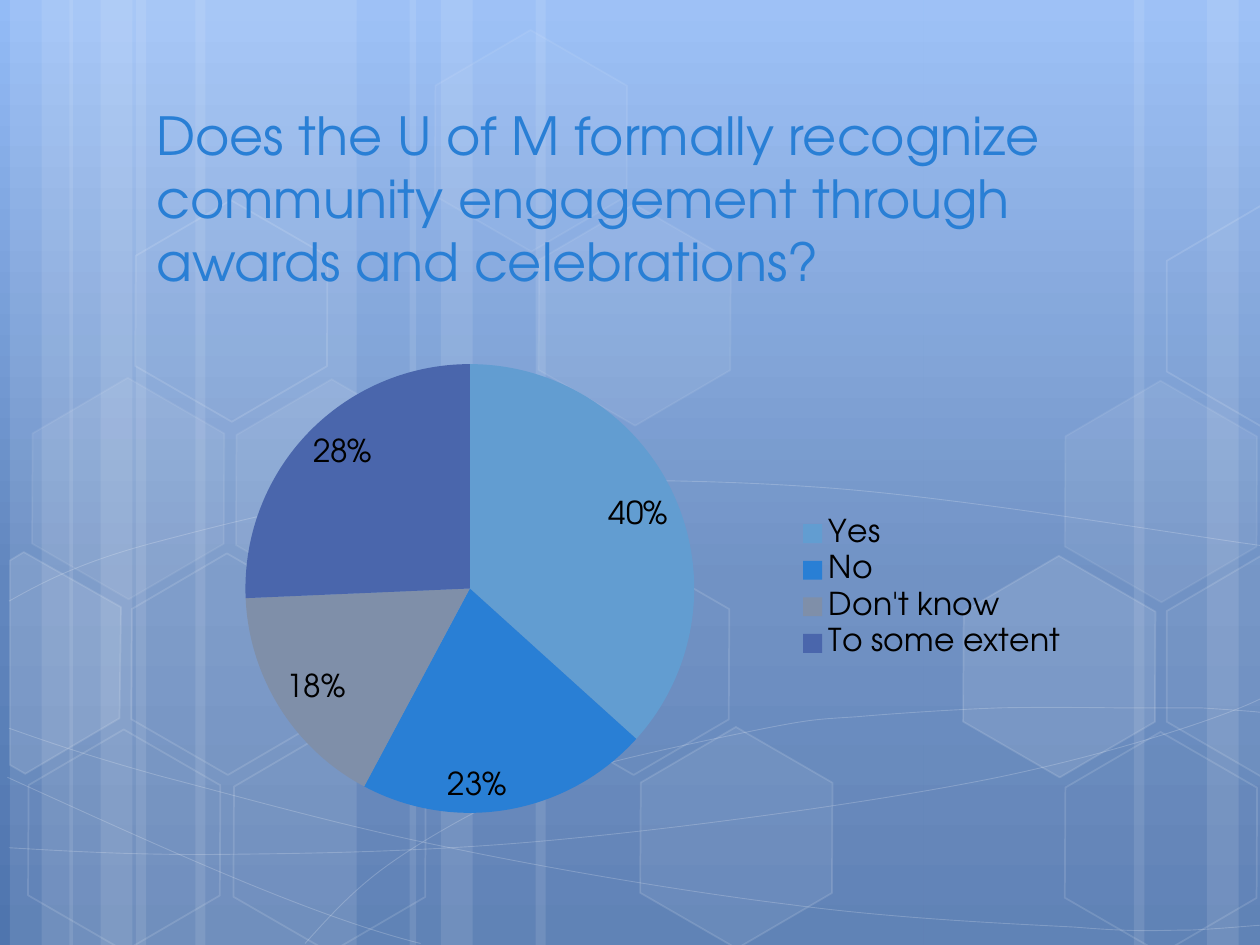
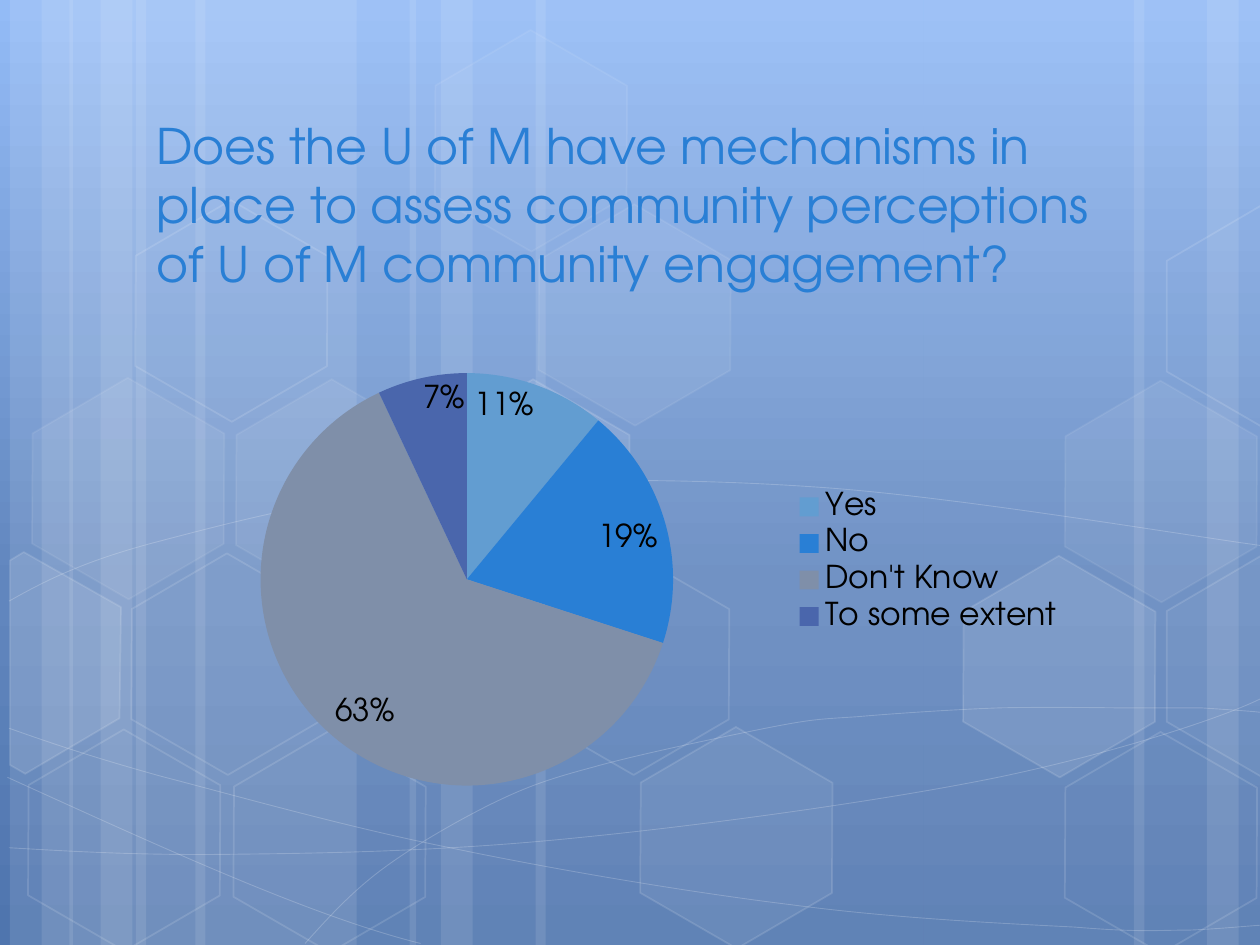
import copy

import pptx
import pptx.chart.data
import pptx.dml.color
import pptx.enum.chart
import pptx.enum.shapes
import pptx.enum.text
import pptx.oxml
import pptx.oxml.ns
import pptx.util

Cm = pptx.util.Cm
Pt = pptx.util.Pt
RGBColor = pptx.dml.color.RGBColor
SHAPE = pptx.enum.shapes.MSO_SHAPE

FONT = "TeX Gyre Adventor"
WHITE = RGBColor(0xFF, 0xFF, 0xFF)
BLACK = RGBColor(0x00, 0x00, 0x00)
TITLE_BLUE = RGBColor(0x29, 0x7F, 0xD5)
SKY = [(0, RGBColor(0x93, 0xBB, 0xF6)), (0.62, RGBColor(0x61, 0x86, 0xBE)),
       (1, RGBColor(0x4F, 0x75, 0xAE))]
SLICE_COLORS = [RGBColor(0x62, 0x9D, 0xD1), TITLE_BLUE,
                RGBColor(0x7F, 0x8F, 0xA9), RGBColor(0x4A, 0x66, 0xAC)]

BANDS = [(2.74, 4.45), (0.2, 1.27), (0.84, 2.11), (3.94, 4.45), (1.4, 1.27), (2.03, 2.11),
         (18.62, 4.45), (24.33, 1.27), (22.86, 2.11), (10.8, 7.82), (8.26, 1.27), (8.89, 2.11)]

CURVES = [
    [(0.18, 17.09), (1.55, 17.17), (2.92, 17.25), (4.83, 17.22), (6.73, 17.2), (9.09, 17.15),
     (11.63, 16.89), (14.17, 16.64), (17.78, 16.15), (20.12, 15.67), (22.43, 15.19),
     (24.82, 14.43), (25.58, 14)],
    [(0.18, 12.12), (0.91, 11.71), (1.65, 11.33), (3.07, 10.95), (4.52, 10.57), (6.58, 10.01),
     (8.81, 9.83), (11.07, 9.65), (13.82, 9.63), (16.61, 9.83), (19.41, 10.03),
     (24.05, 10.82), (25.58, 11.02)],
    [(0.15, 15.67), (3.23, 17.07), (6.27, 18.47), (8.48, 19.02)],
    [(0.18, 14.68), (0.97, 14.96), (1.78, 15.24), (3.25, 15.65), (4.72, 16.03), (6.93, 16.66),
     (9.07, 17.09), (11.18, 17.53), (13.84, 17.98), (15.95, 18.24), (18.06, 18.52),
     (20.32, 18.62), (21.67, 18.69), (22.99, 18.8), (23.34, 18.75), (24, 18.75),
     (24.66, 18.72), (25.1, 18.67), (25.58, 18.64)],
    [(6.15, 19.02), (6.6, 18.52), (7.06, 18.01), (7.67, 17.55), (8.28, 17.09), (9.14, 16.59),
     (9.86, 16.23), (10.57, 15.88), (11, 15.72), (11.94, 15.47), (12.85, 15.21),
     (14.55, 14.86), (15.44, 14.68), (16.36, 14.5), (16.48, 14.5), (17.27, 14.45),
     (18.06, 14.38), (19.3, 14.3), (20.17, 14.27), (21.06, 14.25), (22.5, 14.27),
     (22.5, 14.27), (22.5, 14.27), (24.21, 14.27), (24.21, 14.27), (24.66, 14.3),
     (25.1, 14.33), (25.32, 14.35), (25.55, 14.38), (25.48, 14.35), (25.55, 14.38)],
]

HEXAGONS = [
    (8.53, 7.95, 10, 12), (10.54, 11.46, 0, 12), (10.57, 4.42, 7, 8), (8.48, 0.91, 4, 8),
    (12.62, 14.96, 6, 12), (0.28, 15.01, 0, 12), (0.36, 7.92, 7, 8), (2.36, 11.46, 0, 12),
    (4.42, 15.04, 0, 12), (4.47, 7.95, 7, 8), (2.44, 4.34, 0, 12), (19.13, 11.51, 10, 12),
    (21.18, 15.06, 0, 12), (21.18, 7.98, 7, 8),
]

LEFT_CUT = [(0.2, 11.3), (0.48, 11.13), (2.44, 12.24), (2.41, 14.48), (0.51, 15.6), (0.2, 15.42)]
RIGHT_CUT = [(23.52, 12.32), (25.43, 11.2), (25.63, 11.33), (25.63, 15.57), (25.45, 15.67),
             (23.52, 14.55)]
RIGHT_CUT_HIGH = [(x, y - 7.06) for x, y in RIGHT_CUT]

QUESTIONS = [
    {"title": "Does the U of M formally recognize community engagement through awards and "
              "celebrations?",
     "size": 30, "unsure": "Don't know", "shares": (0.4, 0.23, 0.18, 0.28),
     "corner": (2.97, 6.99), "pie": {"x": 0.105, "y": 0.036, "w": 0.481, "h": 0.928}},
    {"title": "Does the U of M have mechanisms in place to assess community perceptions of "
              "U of M community engagement?",
     "size": 28, "unsure": "Don't Know", "shares": (0.11, 0.19, 0.63, 0.07),
     "corner": (2.9, 6.45), "pie": {"x": 0.125, "y": 0.11, "w": 0.442, "h": 0.853}},
]


def veil(shape, fill_percent, line_percent, line_width=1):
    shape.shadow.inherit = False
    for fill, percent in ((shape.fill, fill_percent), (shape.line.fill, line_percent)):
        if percent:
            fill.solid()
            fill.fore_color.rgb = WHITE
        else:
            fill.background()
    if line_percent:
        shape.line.width = Pt(line_width)
    percents = [percent for percent in (fill_percent, line_percent) if percent]
    for color, percent in zip(shape.element.xpath("./p:spPr//a:srgbClr"), percents):
        alpha = pptx.oxml.ns.qn("a:alpha")
        color.makeelement(alpha)
        color.append(color.makeelement(alpha, {"val": str(percent * 1000)}))


def outline(page, points, closed):
    spots = [(Cm(x), Cm(y)) for x, y in points]
    builder = page.shapes.build_freeform(*spots[0])
    builder.add_line_segments(spots[1:], close=closed)
    return builder.convert_to_shape()


deck = pptx.Presentation()
deck.slide_width = Cm(25.4)
deck.slide_height = Cm(19.05)
layout = deck.slide_layouts[5]
pages = [deck.slides.add_slide(layout) for question in QUESTIONS]

sky = layout.background.fill
sky.gradient()
sky.gradient_angle = 270
stop_list = layout.element.xpath(".//p:bg//a:gsLst")[0]
stop_list.append(copy.deepcopy(stop_list[0]))
for stop, (position, color) in zip(sky.gradient_stops, SKY):
    stop.position = position
    stop.color.rgb = color

canvas = pages[0]
backdrop = []
for left, width in BANDS:
    band = canvas.shapes.add_shape(SHAPE.RECTANGLE, Cm(left), 0, Cm(width), deck.slide_height)
    veil(band, 10, 0)
    backdrop.append(band)

for points in CURVES:
    curve = outline(canvas, points, False)
    veil(curve, 0, 20, 0.5)
    route = curve.element.xpath(".//a:path")[0]
    segments = curve.element.xpath(".//a:lnTo")
    for start in range(0, len(segments), 3):
        bend = route.makeelement(pptx.oxml.ns.qn("a:cubicBezTo"))
        route.append(bend)
        for segment in segments[start:start + 3]:
            bend.append(segment[0])
            route.remove(segment)
    backdrop.append(curve)

for left, top, fill_percent, line_percent in HEXAGONS:
    hexagon = canvas.shapes.add_shape(SHAPE.HEXAGON, Cm(left), Cm(top), Cm(4.45), Cm(3.86))
    hexagon.adjustments[0] = 0.285
    hexagon.rotation = 30
    veil(hexagon, fill_percent, line_percent)
    backdrop.append(hexagon)

for points, fill_percent in ((LEFT_CUT, 10), (RIGHT_CUT, 4), (RIGHT_CUT_HIGH, 0)):
    cut_hexagon = outline(canvas, points, True)
    veil(cut_hexagon, fill_percent, 12)
    backdrop.append(cut_hexagon)

for shape in backdrop:
    layout.shapes.element.append(shape.element)

for page, question in zip(pages, QUESTIONS):
    title = page.shapes.title
    title.left, title.top, title.width, title.height = Cm(2.9), Cm(2.84), Cm(19.51), Cm(3.18)
    title.text_frame.word_wrap = True
    title.text_frame.auto_size = pptx.enum.text.MSO_AUTO_SIZE.NONE
    title.text_frame.vertical_anchor = pptx.enum.text.MSO_ANCHOR.BOTTOM
    para = title.text_frame.paragraphs[0]
    para.alignment = pptx.enum.text.PP_ALIGN.LEFT
    span = para.add_run()
    span.text = question["title"]
    span.font.name = FONT
    span.font.size = Pt(question["size"])
    span.font.color.rgb = TITLE_BLUE

    answers = pptx.chart.data.CategoryChartData(number_format="0%")
    answers.categories = ["Yes", "No", question["unsure"], "To some extent"]
    answers.add_series("Series 1", question["shares"])
    left, top = question["corner"]
    chart = page.shapes.add_chart(pptx.enum.chart.XL_CHART_TYPE.PIE, Cm(left), Cm(top),
                                  Cm(18.82), Cm(9.75), answers).chart
    chart.has_title = False
    chart.font.name = FONT
    chart.font.size = Pt(18)
    chart.font.color.rgb = BLACK
    chart.has_legend = True
    chart.legend.position = pptx.enum.chart.XL_LEGEND_POSITION.RIGHT
    chart.legend.include_in_layout = False

    pie = chart.plots[0]
    pie.vary_by_categories = True
    pie.has_data_labels = True
    labels = pie.data_labels
    labels.show_value = True
    labels.show_percentage = False
    labels.number_format = "0%"
    labels.number_format_is_linked = False
    labels.position = pptx.enum.chart.XL_LABEL_POSITION.INSIDE_END
    for index, color in enumerate(SLICE_COLORS):
        slice_fill = pie.series[0].points[index].format.fill
        slice_fill.solid()
        slice_fill.fore_color.rgb = color

    plot_area = chart.element.xpath(".//c:plotArea")[0]
    for old_layout in plot_area.xpath("./c:layout"):
        plot_area.remove(old_layout)
    settings = {"layoutTarget": "inner", "xMode": "edge", "yMode": "edge", **question["pie"]}
    plot_area.insert(0, pptx.oxml.parse_xml(
        f"<c:layout {pptx.oxml.ns.nsdecls('c')}><c:manualLayout>"
        + "".join(f'<c:{name} val="{value}"/>' for name, value in settings.items())
        + "</c:manualLayout></c:layout>"))

deck.save("out.pptx")
